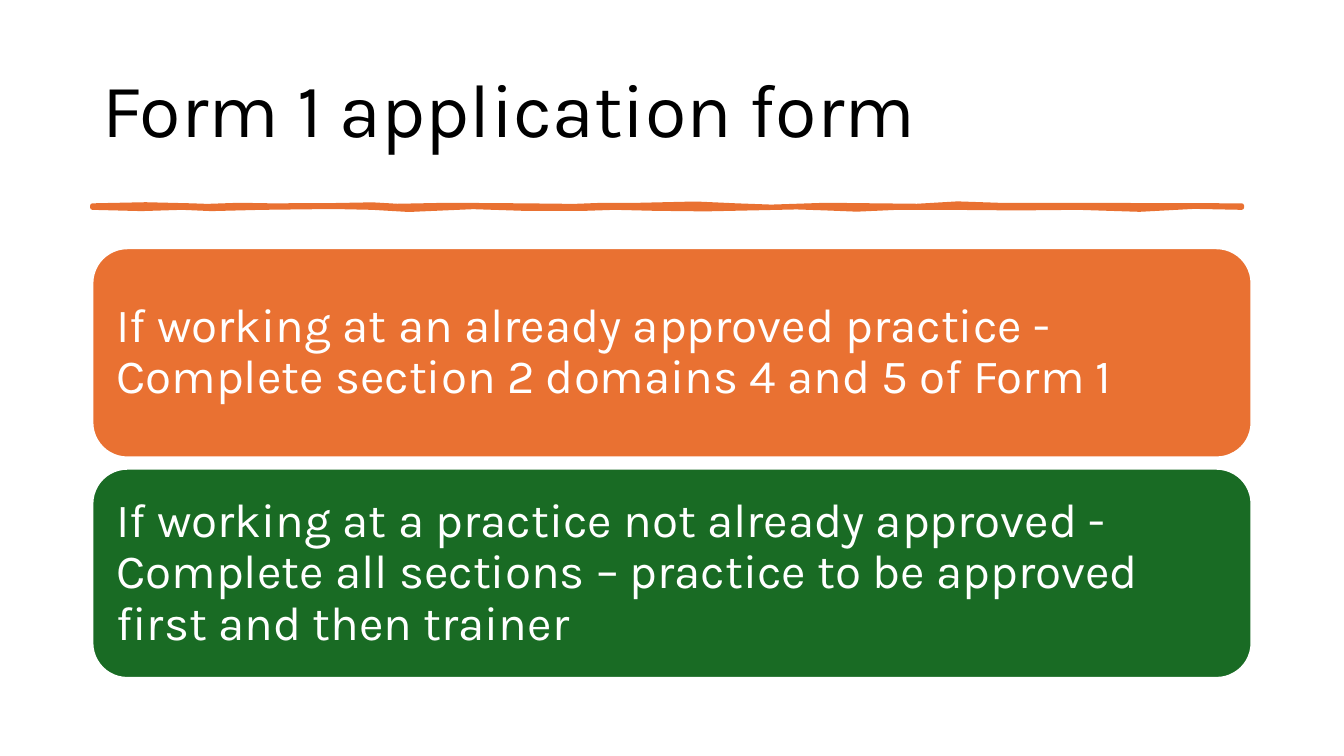
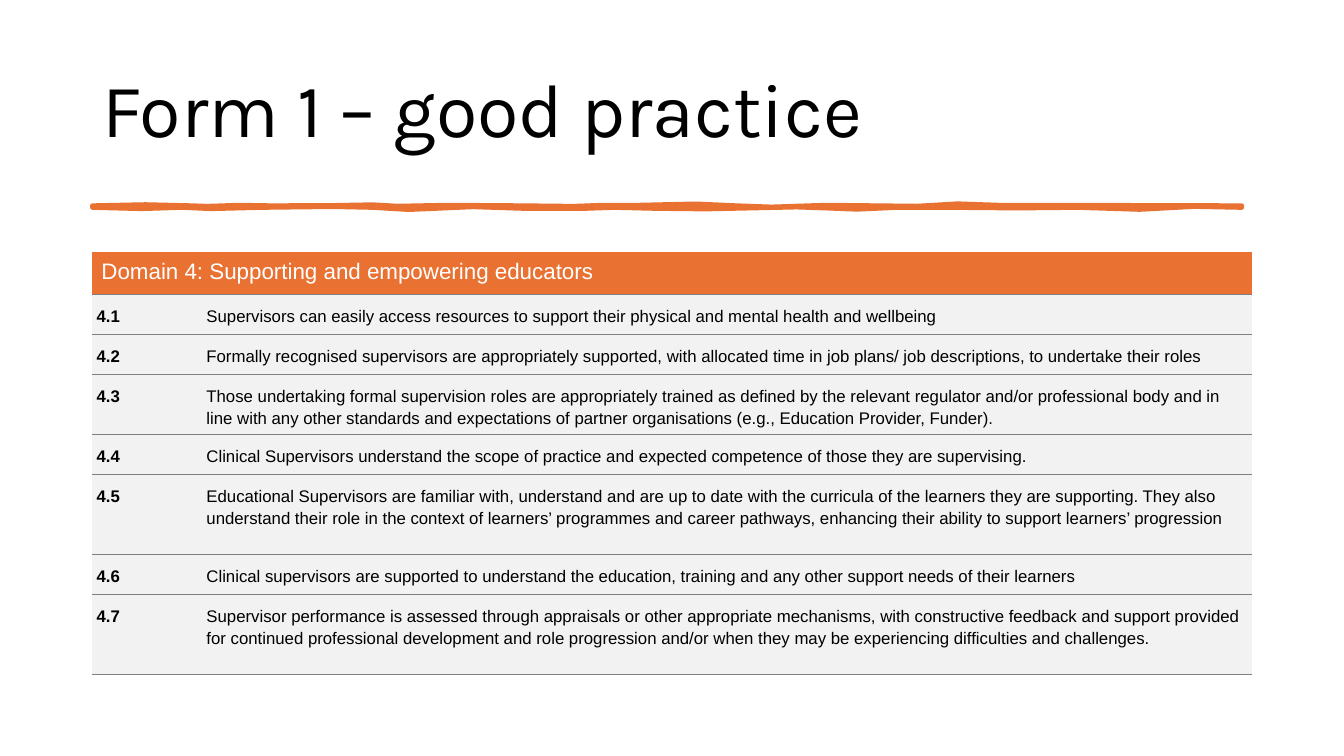
"""Build two slides about the Form 1 application."""
from lxml import etree
from pptx import Presentation
from pptx.dml.color import RGBColor
from pptx.enum.shapes import MSO_SHAPE
from pptx.enum.text import MSO_ANCHOR, MSO_AUTO_SIZE, PP_ALIGN
from pptx.oxml.ns import qn
from pptx.util import Pt

ROUNDED = MSO_SHAPE.ROUNDED_RECTANGLE
MIDDLE, TOP = MSO_ANCHOR.MIDDLE, MSO_ANCHOR.TOP
LEFT = PP_ALIGN.LEFT
NO_FIT = MSO_AUTO_SIZE.NONE
TITLE_ONLY = 5

COLOURS = {
    "orange": "E97132",
    "green": "196B24",
    "white": "FFFFFF",
    "black": "000000",
    "pale": "F2F2F2",
    "grey": "808080",
}
HEADING_FONT, TABLE_FONT = "Karla", "Arial"
MARGIN, CONTENT_WIDTH = 66, 828

RULE_TOP_EDGE = [
    (66, 146.9), (104, 146.1), (137, 146.9), (148, 147.3), (171, 146.5),
    (194, 146.9), (238, 146.7), (266, 146.2), (284, 147.2), (320, 146.5),
    (374, 146.9), (410, 147.3), (431, 146.5), (457, 146.5), (497, 145.6),
    (526, 146.9), (551, 147.8), (590, 146.5), (626, 146.9), (655, 147.2),
    (684, 145.5), (713, 146.5), (828, 146.7), (887, 146.9),
]
RULE_BOTTOM_EDGE = [
    (887, 148.3), (853, 147.6), (814, 149.7), (770, 148.3), (727, 148.7),
    (677, 148.3), (641, 148.3), (612, 149.6), (590, 148.7), (569, 148),
    (536, 148.7), (504, 149.4), (468, 149), (439, 148.3), (418, 149),
    (374, 149), (338, 147.8), (292, 149.8), (266, 148.3), (238, 147.7),
    (187, 148.3), (151, 149.2), (130, 148.3), (101, 149.2), (66, 148.3),
]

CARDS = [
    ("If working at an already approved practice - "
     "Complete section 2 domains 4 and 5 of Form 1", "orange"),
    ("If working at a practice not already approved - "
     "Complete all sections – practice to be approved first and then trainer",
     "green"),
]

DOMAIN = "Domain 4: Supporting and empowering educators"
STANDARDS = [
    ("Supervisors can easily access resources to support their physical and "
     "mental health and wellbeing", 1),
    ("Formally recognised supervisors are appropriately supported, with "
     "allocated time in job plans/ job descriptions, to undertake their roles", 1),
    ("Those undertaking formal supervision roles are appropriately trained as "
     "defined by the relevant regulator and/or professional body and in line "
     "with any other standards and expectations of partner organisations "
     "(e.g., Education Provider, Funder).", 1.5),
    ("Clinical Supervisors understand the scope of practice and expected "
     "competence of those they are supervising.", 1),
    ("Educational Supervisors are familiar with, understand and are up to date "
     "with the curricula of the learners they are supporting. They also "
     "understand their role in the context of learners’ programmes and career "
     "pathways, enhancing their ability to support learners’ progression", 2),
    ("Clinical supervisors are supported to understand the education, training "
     "and any other support needs of their learners", 1),
    ("Supervisor performance is assessed through appraisals or other "
     "appropriate mechanisms, with constructive feedback and support provided "
     "for continued professional development and role progression and/or when "
     "they may be experiencing difficulties and challenges.", 2),
]


def colour(name):
    """Return the named colour."""
    return RGBColor.from_string(COLOURS[name])


def write(frame, text, font=HEADING_FONT, size=34, ink="white", bold=False,
          spacing=0.9):
    """Put one formatted paragraph into a text frame."""
    frame.word_wrap = True
    para = frame.paragraphs[0]
    para.alignment = LEFT
    para.line_spacing = spacing
    span = para.add_run()
    span.text = text
    span.font.name = font
    span.font.size = Pt(size)
    span.font.bold = bold
    span.font.color.rgb = colour(ink)


def border(cell, side, ink=None):
    """Draw one cell border, or hide it when no colour is given."""
    properties = cell._tc.get_or_add_tcPr()
    line = etree.SubElement(properties, qn(f"a:ln{side}"), w=str(Pt(0.75)))
    if ink:
        fill = etree.SubElement(line, qn("a:solidFill"))
        etree.SubElement(fill, qn("a:srgbClr"), val=COLOURS[ink])
    else:
        etree.SubElement(line, qn("a:noFill"))


class Pages:
    """Hold the deck, its style and the current page."""

    def __init__(self):
        """Start a widescreen deck."""
        self.deck = Presentation()
        self.deck.slide_width, self.deck.slide_height = Pt(960), Pt(540)
        self.page = None

    def add_page(self, title):
        """Start a page with its title and the hand-drawn rule."""
        self.page = self.deck.slides.add_slide(
            self.deck.slide_layouts[TITLE_ONLY])
        box = self.page.shapes.title
        box.left, box.top = Pt(MARGIN), Pt(28.75)
        box.width, box.height = Pt(CONTENT_WIDTH), Pt(104.4)
        box.text_frame.auto_size = NO_FIT
        box.text_frame.vertical_anchor = MIDDLE
        write(box.text_frame, title, size=54, ink="black")
        self.add_rule()

    def paint(self, shape, fill, line, width):
        """Give a shape its fill and line, without shadow."""
        shape.shadow.inherit = False
        shape.fill.solid()
        shape.fill.fore_color.rgb = colour(fill)
        shape.line.color.rgb = colour(line)
        shape.line.width = Pt(width)

    def add_rule(self):
        """Draw the uneven orange rule below the title."""
        first, *others = [(Pt(x), Pt(y))
                          for x, y in RULE_TOP_EDGE + RULE_BOTTOM_EDGE]
        builder = self.page.shapes.build_freeform(*first)
        builder.add_line_segments(others, close=True)
        rule = builder.convert_to_shape()
        self.paint(rule, "orange", "orange", 3.25)
        etree.SubElement(rule.line._get_or_add_ln(), qn("a:round"))

    def add_card(self, text, fill, top, height):
        """Add a rounded card with text."""
        card = self.page.shapes.add_shape(
            ROUNDED, Pt(MARGIN), Pt(top), Pt(CONTENT_WIDTH), Pt(height))
        self.paint(card, fill, "white", 1.5)
        frame = card.text_frame
        frame.margin_left = frame.margin_right = Pt(10)
        frame.margin_top = frame.margin_bottom = Pt(10)
        frame.vertical_anchor = MIDDLE
        write(frame, text)

    def fill_cell(self, cell, text, fill, heading=False, **style):
        """Format one table cell and write its text."""
        for side in "LR":
            border(cell, side)
        border(cell, "T", None if heading else "grey")
        border(cell, "B", "grey")
        cell.fill.solid()
        cell.fill.fore_color.rgb = colour(fill)
        cell.margin_left = cell.margin_right = Pt(6.5 if heading else 3)
        cell.margin_top = Pt(7.4)
        cell.margin_bottom = Pt(6.5 if heading else 4.4)
        cell.vertical_anchor = MIDDLE if heading else TOP
        write(cell.text_frame, text, font=TABLE_FONT, spacing=Pt(15.4), **style)

    def add_standards(self, heading, standards, top, header=30.2, unit=28.6):
        """Add a table of numbered standards under one heading."""
        heights = [header] + [unit * units for _, units in standards]
        table = self.page.shapes.add_table(
            len(heights), 2, Pt(MARGIN), Pt(top), Pt(CONTENT_WIDTH),
            Pt(sum(heights))).table
        table.first_row = table.horz_banding = False
        for column, width in zip(table.columns, (78.5, CONTENT_WIDTH - 78.5)):
            column.width = Pt(width)
        for row, height in zip(table.rows, heights):
            row.height = Pt(height)
        table.cell(0, 0).merge(table.cell(0, 1))
        self.fill_cell(table.cell(0, 0), heading, "orange", heading=True, size=16)
        for index, (text, _) in enumerate(standards, 1):
            self.fill_cell(table.cell(index, 0), f"4.{index}", "pale",
                           size=12, ink="black", bold=True)
            self.fill_cell(table.cell(index, 1), text, "pale",
                           size=12, ink="black")


def main():
    """Build and save the deck."""
    pages = Pages()
    pages.add_page("Form 1 application form")
    for index, (text, fill) in enumerate(CARDS):
        pages.add_card(text, fill, top=177.3 + index * 157.5, height=149.5)
    pages.add_page("Form 1 – good practice")
    pages.add_standards(DOMAIN, STANDARDS, top=180)
    pages.deck.save("out.pptx")


if __name__ == "__main__":
    main()
